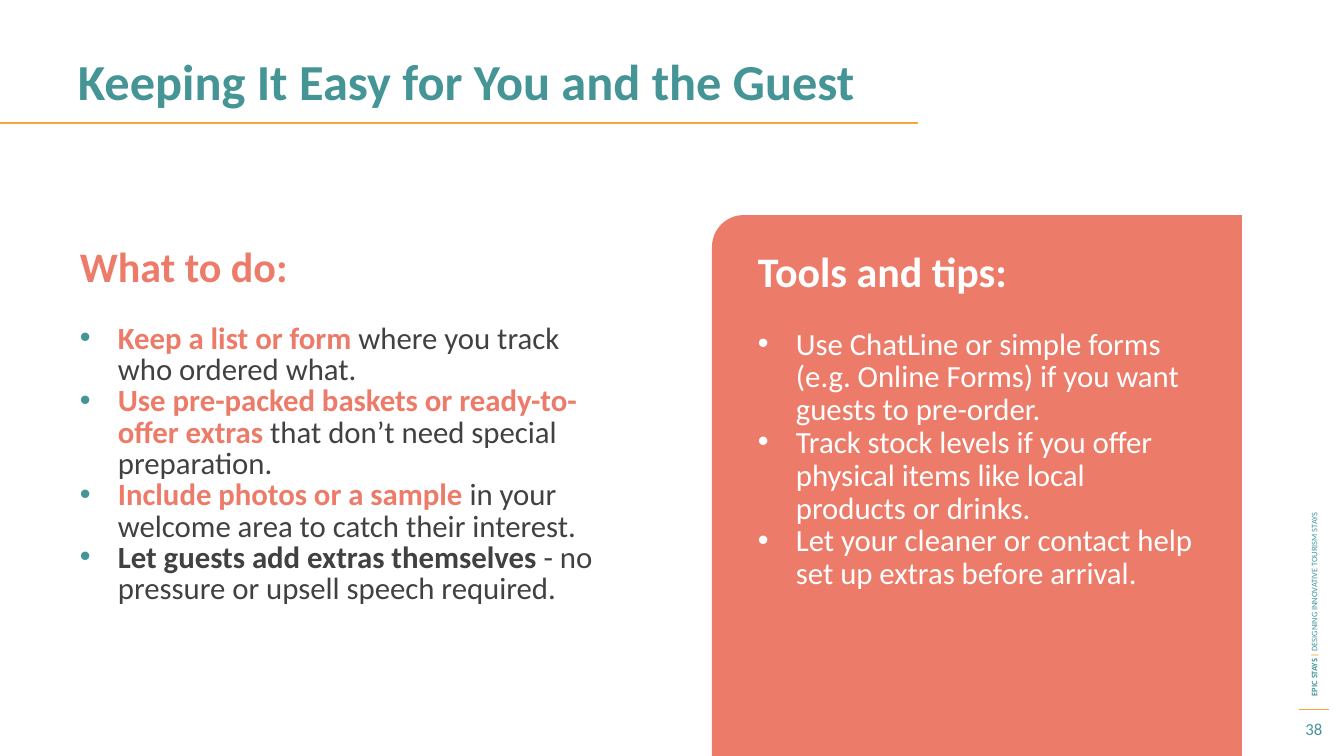
from lxml.etree import SubElement
from pptx import Presentation
from pptx.dml.color import RGBColor
from pptx.enum.shapes import MSO_CONNECTOR, MSO_SHAPE
from pptx.enum.text import MSO_ANCHOR, PP_ALIGN
from pptx.oxml.ns import qn
from pptx.util import Pt

PX = 914400 / 100.8
SLIDE = (1344, 756)
TEAL, CORAL, DARK, WHITE = "459597", "EC7C69", "414141", "FFFFFF"
AMBER = "FBA63B"
INDENT = 38

# Each paragraph is a list of (text, colour, bold) spans.
TITLE = [[("Keeping It Easy for You and the Guest", TEAL, True)]]
TO_DO_HEADING = [[("What to do:", CORAL, True)]]
TO_DO_ITEMS = [
    [("Keep a list or form ", CORAL, True),
     ("where you track who ordered what.", DARK, False)],
    [("Use pre-packed baskets or ready-to-offer extras ", CORAL, True),
     ("that don’t need special preparation.", DARK, False)],
    [("Include photos or a sample ", CORAL, True),
     ("in your welcome area to catch their interest.", DARK, False)],
    [("Let guests add extras themselves ", DARK, True),
     ("- no pressure or upsell speech required.", DARK, False)],
]
TIPS_HEADING = [[("Tools and tips:", WHITE, True)]]
TIPS_ITEMS = [
    [("Use ChatLine or simple forms (e.g. Online Forms) if you want guests to pre-order.",
      WHITE, False)],
    [("Track stock levels if you offer physical items like local products or drinks.",
      WHITE, False)],
    [("Let your cleaner or contact help set up extras before arrival.", WHITE, False)],
]
FOOTER = [[("EPIC STAYS ", TEAL, True), ("| ", AMBER, True),
           ("DESIGNING INNOVATIVE TOURISM STAYS", TEAL, False)]]
PAGE_NUMBER = [[("38", TEAL, False)]]

PANEL = (712, 215, 530, 541)
RULES = [((0, 123), (918, 123), AMBER, 1.5), ((1299, 710), (1329, 710), AMBER, 0.75)]

HEADING = {"size": 30}
# Each box: place, text box settings, then (paragraphs, format) groups.
BOXES = [
    ((68, 54, 1210, 89), {}, [(TITLE, {"size": 36, "line": 37.2})]),
    ((70, 245, 619, 89), {}, [(TO_DO_HEADING, HEADING | {"line": 29})]),
    ((70, 319, 545, 403), {}, [(TO_DO_ITEMS, {"size": 22, "line": 22.4, "bullet": TEAL})]),
    ((748, 258, 458, 362), {}, [
        (TIPS_HEADING, HEADING | {"line": 23.4, "after": 23.4}),
        (TIPS_ITEMS, {"size": 22, "line": 23.4, "bullet": WHITE})]),
    ((1023, 405, 582, 20), {"rotation": 270, "anchor": MSO_ANCHOR.MIDDLE},
     [(FOOTER, {"size": 6})]),
    ((1288, 712, 52, 34), {"anchor": MSO_ANCHOR.MIDDLE},
     [(PAGE_NUMBER, {"size": 12, "align": PP_ALIGN.CENTER})]),
]


def emu(*lengths):
    return [round(length * PX) for length in lengths]


def rgb(value):
    return RGBColor.from_string(value)


def add_bullet(para, colour):
    properties = para._p.get_or_add_pPr()
    indent = emu(INDENT)[0]
    properties.set("marL", str(indent))
    properties.set("indent", str(-indent))
    bullet_colour = SubElement(properties, qn("a:buClr"))
    SubElement(bullet_colour, qn("a:srgbClr"), val=colour)
    SubElement(properties, qn("a:buFont"), typeface="Arial")
    SubElement(properties, qn("a:buChar"), char="•")


def add_paragraph(para, spans, style):
    if "bullet" in style:
        add_bullet(para, style["bullet"])
    if "line" in style:
        para.line_spacing = Pt(style["line"])
    if "after" in style:
        para.space_after = Pt(style["after"])
    para.alignment = style.get("align", PP_ALIGN.LEFT)
    for text, colour, bold in spans:
        span = para.add_run()
        span.text = text
        for name, value in {"name": "Calibri", "size": Pt(style["size"]), "bold": bold}.items():
            setattr(span.font, name, value)
        span.font.color.rgb = rgb(colour)


def add_text(page, place, settings, groups):
    box = page.shapes.add_textbox(*emu(*place))
    box.rotation = settings.get("rotation", 0)
    frame = box.text_frame
    frame.word_wrap = True
    frame.vertical_anchor = settings.get("anchor", MSO_ANCHOR.TOP)
    para = frame.paragraphs[0]
    for paragraphs, style in groups:
        for spans in paragraphs:
            if para is None:
                para = frame.add_paragraph()
            add_paragraph(para, spans, style)
            para = None


def add_panel(page):
    """Turn a shape with a round top right corner so that the top left is round."""
    left, top, width, height = PANEL
    shift = (width - height) / 2
    panel = page.shapes.add_shape(MSO_SHAPE.ROUND_1_RECTANGLE,
                                  *emu(left + shift, top - shift, height, width))
    panel.rotation = 270
    panel.adjustments[0] = 0.06
    panel.shadow.inherit = False
    panel.fill.solid()
    panel.fill.fore_color.rgb = rgb(CORAL)
    panel.line.fill.background()


def add_rule(page, start, end, colour, weight):
    rule = page.shapes.add_connector(MSO_CONNECTOR.STRAIGHT, *emu(*start, *end))
    rule.line.color.rgb = rgb(colour)
    rule.line.width = Pt(weight)
    SubElement(rule._element.spPr, qn("a:effectLst"))


def main():
    deck = Presentation()
    deck.slide_width, deck.slide_height = emu(*SLIDE)
    page = deck.slides.add_slide(deck.slide_layouts[6])
    add_panel(page)
    for rule in RULES:
        add_rule(page, *rule)
    for box in BOXES:
        add_text(page, *box)
    deck.save("out.pptx")


if __name__ == "__main__":
    main()
